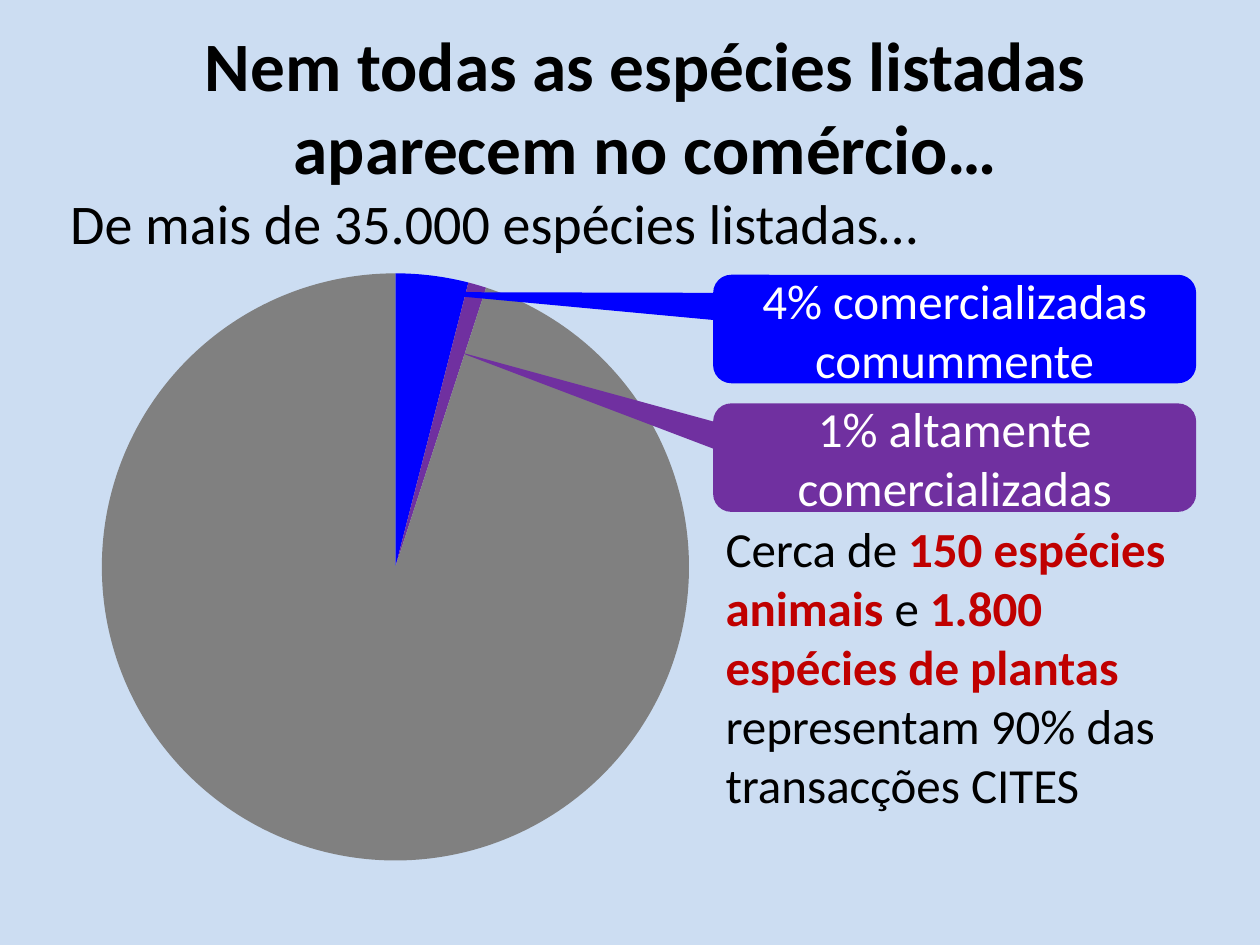
from lxml import etree
from pptx import Presentation
from pptx.chart.data import CategoryChartData
from pptx.dml.color import RGBColor
from pptx.enum.chart import XL_CHART_TYPE as ChartType
from pptx.enum.shapes import MSO_SHAPE as Shape
from pptx.enum.text import MSO_ANCHOR as Anchor, PP_ALIGN as Align
from pptx.oxml import parse_xml
from pptx.oxml.ns import nsdecls
from pptx.util import Pt

SKY = RGBColor(0xCC, 0xDD, 0xF2)
BLACK = RGBColor(0, 0, 0)
WHITE = RGBColor(0xFF, 0xFF, 0xFF)
BLUE = RGBColor(0, 0, 0xFF)
PURPLE = RGBColor(0x70, 0x30, 0xA0)
GRAY = RGBColor(0x80, 0x80, 0x80)
RED = RGBColor(0xC0, 0, 0)
FONT = "Calibri"


def style(font, size, color, bold=False):
    font.name, font.size, font.bold = FONT, Pt(size), bold
    font.color.rgb = color


def add_text(page, box, spans, size, align=Align.LEFT, anchor=Anchor.TOP):
    """Place one paragraph; spans are (text, color, bold)."""
    frame = page.shapes.add_textbox(*map(Pt, box)).text_frame
    frame.word_wrap = True
    frame.vertical_anchor = anchor
    para = frame.paragraphs[0]
    para.alignment = align
    for text, color, bold in spans:
        span = para.add_run()
        span.text = text
        style(span.font, size, color, bold)


def add_pie(page, box, values, colors):
    data = CategoryChartData()
    data.categories = [str(i + 1) for i in range(len(values))]
    data.add_series("Series 1", values)
    chart = page.shapes.add_chart(ChartType.PIE, *map(Pt, box), data).chart
    chart.has_legend = chart.has_title = False
    style(chart.font, 10, BLACK)
    plot = chart.plots[0]
    plot.vary_by_categories = True
    for index, color in enumerate(colors):
        fmt = plot.series[0].points[index].format
        fmt.fill.solid()
        fmt.fill.fore_color.rgb = color
        fmt.line.fill.background()

    # Fix the plot area so that the pie nearly fills the chart height
    area = chart.element.find(".//{*}plotArea")
    for old in area.findall("{*}layout"):
        area.remove(old)
    layout = parse_xml(f"<c:layout {nsdecls('c')}><c:manualLayout/></c:layout>")
    settings = [("layoutTarget", "inner"), ("xMode", "edge"), ("yMode", "edge"),
                ("x", "0.12"), ("y", "0.03"), ("w", "0.76"), ("h", "0.94")]
    for name, value in settings:
        etree.SubElement(layout[0], layout.tag.replace("layout", name), val=value)
    area.insert(0, layout)


def add_callout(page, box, text, color, tip):
    callout = page.shapes.add_shape(Shape.ROUNDED_RECTANGULAR_CALLOUT, *map(Pt, box))
    callout.shadow.inherit = False
    callout.adjustments[0], callout.adjustments[1] = tip
    callout.fill.solid()
    callout.fill.fore_color.rgb = color
    callout.line.fill.background()
    frame = callout.text_frame
    frame.word_wrap = True
    frame.vertical_anchor = Anchor.MIDDLE
    para = frame.paragraphs[0]
    para.text = text
    para.alignment = Align.CENTER
    style(para.runs[0].font, 28, WHITE)


def add_callouts(page, left, top, width, height, pitch):
    notes = [("4% comercializadas comummente", BLUE, (-1.12, -0.34)),
             ("1% altamente comercializadas", PURPLE, (-1.03, -0.98))]
    for row, (text, color, tip) in enumerate(notes):
        add_callout(page, (left, top + row * pitch, width, height), text, color, tip)


def build_slide(deck):
    page = deck.slides.add_slide(deck.slide_layouts[6])
    page.background.fill.solid()
    page.background.fill.fore_color.rgb = SKY

    # Title and lead-in
    add_text(page, (45, 15, 648, 90),
             [("Nem todas as espécies listadas aparecem no comércio…", BLACK, True)],
             39.6, Align.CENTER, Anchor.MIDDLE)
    add_text(page, (33, 104, 653, 65),
             [("De mais de 35.000 espécies listadas…", BLACK, False)], 32)

    # Shares of listed species with their callouts
    add_pie(page, (5, 145.5, 442, 357), (4, 1, 95), (BLUE, PURPLE, GRAY))
    add_callouts(page, 407.5, 157, 276, 62, pitch=73.5)

    # Conclusion
    add_text(page, (407.5, 293, 292, 177),
             [("Cerca de ", BLACK, False),
              ("150 espécies animais ", RED, True),
              ("e ", BLACK, False),
              ("1.800 espécies de plantas ", RED, True),
              ("representam 90% das transacções CITES", BLACK, False)], 28)


def main():
    deck = Presentation()
    deck.slide_width, deck.slide_height = Pt(720), Pt(540)
    build_slide(deck)
    deck.save("out.pptx")


if __name__ == "__main__":
    main()
